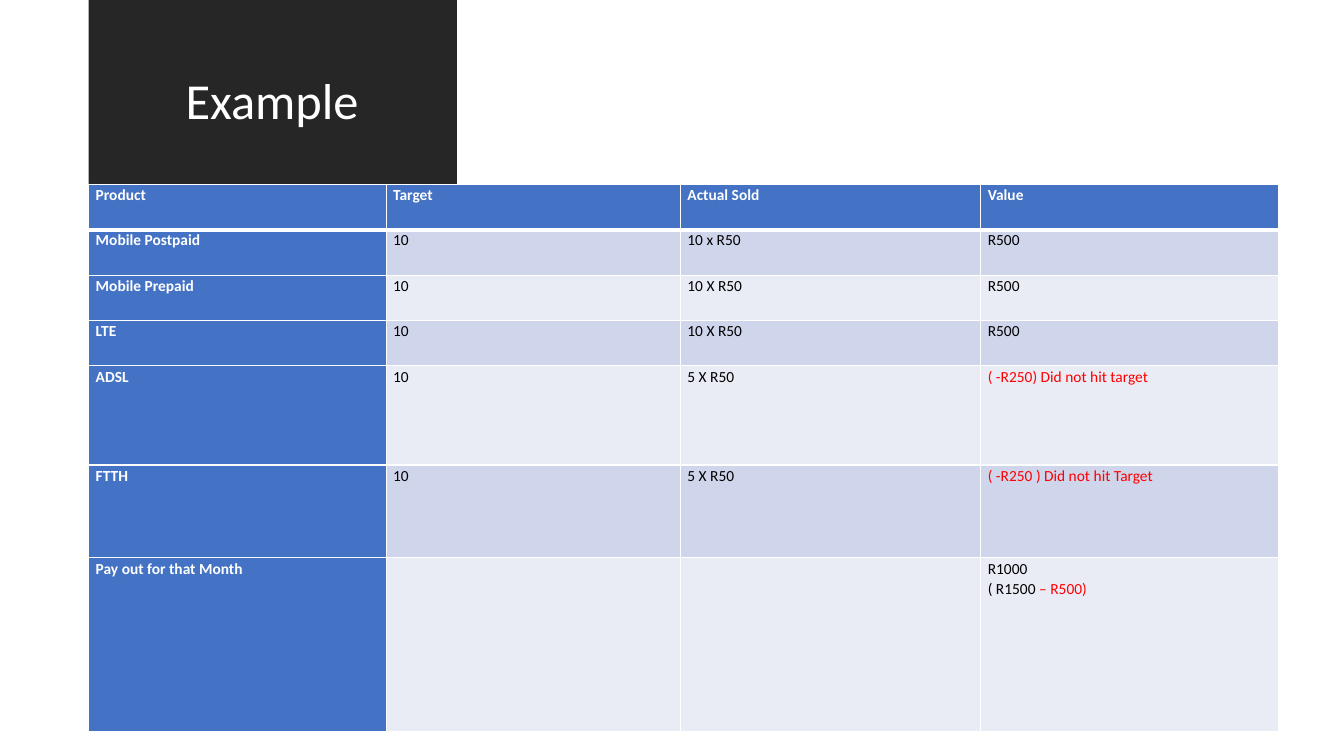
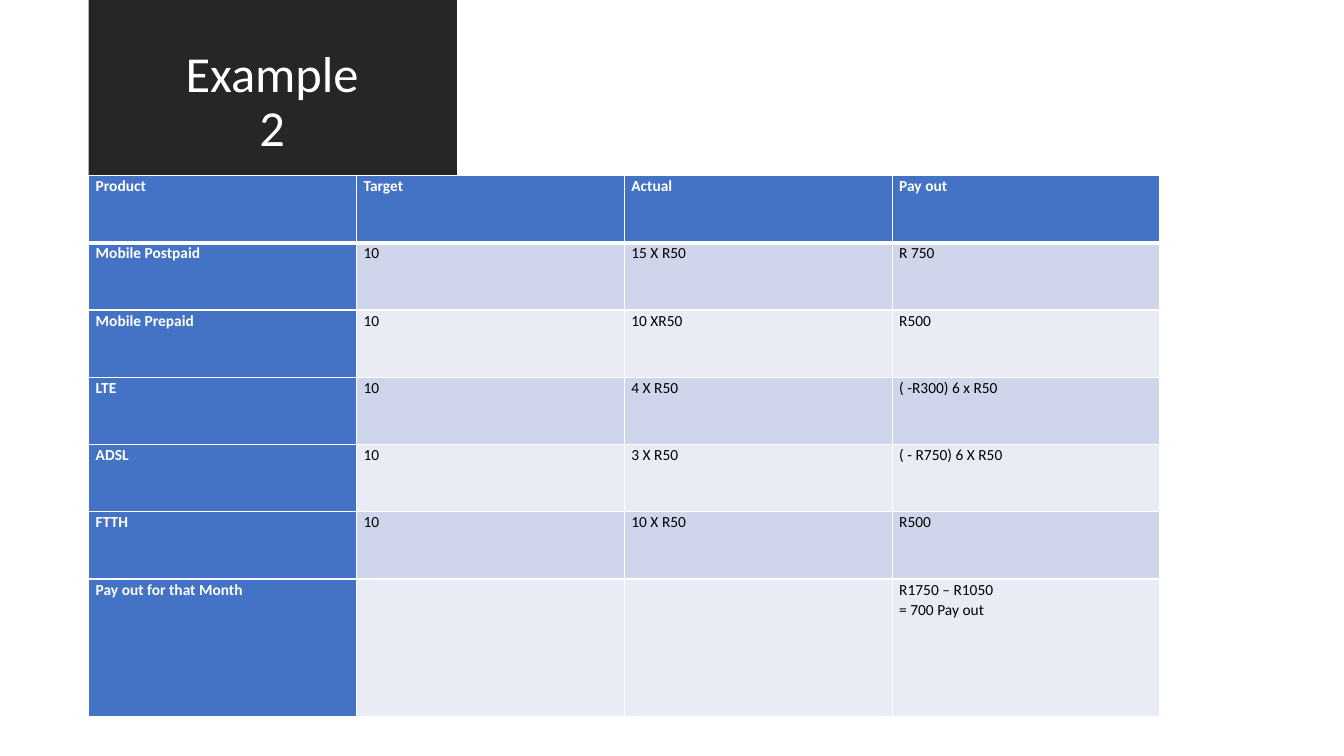
from lxml import etree
from pptx import Presentation
from pptx.dml.color import RGBColor
from pptx.enum.shapes import MSO_SHAPE
from pptx.enum.text import MSO_ANCHOR, MSO_AUTO_SIZE, PP_ALIGN
from pptx.oxml.ns import qn
from pptx.util import Inches, Pt

DOWN_ARROW = MSO_SHAPE.DOWN_ARROW
MIDDLE = MSO_ANCHOR.MIDDLE
NO_AUTOFIT = MSO_AUTO_SIZE.NONE
CENTER = PP_ALIGN.CENTER

WIDTH, HEIGHT = Inches(13.33), Inches(7.5)
COLUMN, ROW = WIDTH / 100, HEIGHT / 100
LEFT = int(6.6 * COLUMN)
FONT = "Calibri"
COLORS = {
    "arrow": "262626",
    "header": "4472C4",
    "dark band": "CFD5EA",
    "light band": "E9EBF5",
    "white": "FFFFFF",
    "black": "000000",
    "red": "FF0000",
}
RED_MARK = "|"

EXAMPLES = [
    {
        "title": "Example",
        "top": 24.4,
        "columns": [22.13, 21.9, 22.35, 22.13],
        "rows": [6] * 4 + [13.1, 12.3, 23],
        "cells": [
            ["Product", "Target", "Actual Sold", "Value"],
            ["Mobile Postpaid", "10", "10 x R50", "R500"],
            ["Mobile Prepaid", "10", "10 X R50", "R500"],
            ["LTE", "10", "10 X R50", "R500"],
            ["ADSL", "10", "5 X R50", "|( -R250) Did not hit target"],
            ["FTTH", "10", "5 X R50", "|( -R250 ) Did not hit Target"],
            ["Pay out for that Month", "", "", "R1000\n( R1500 |– R500)"],
        ],
    },
    {
        "title": "Example\v2",
        "top": 23.2,
        "columns": [19.93] * 4,
        "rows": [8.9] * 6 + [18.2],
        "cells": [
            ["Product", "Target", "Actual", "Pay out"],
            ["Mobile Postpaid", "10", "15 X R50", "R 750"],
            ["Mobile Prepaid", "10", "10 XR50", "R500"],
            ["LTE", "10", "4 X R50", "( -R300) 6 x R50"],
            ["ADSL", "10", "3 X R50", "( - R750) 6 X R50"],
            ["FTTH", "10", "10 X R50", "R500"],
            ["Pay out for that Month", "", "", "R1750 – R1050\n= 700 Pay out"],
        ],
    },
]


def color(name):
    return RGBColor.from_string(COLORS[name])


def set_borders(cell, widths):
    properties = cell._tc.get_or_add_tcPr()
    for position, (side, width) in enumerate(widths.items()):
        line = etree.Element(qn(f"a:ln{side}"), w=str(Pt(width)))
        fill = etree.SubElement(line, qn("a:solidFill"))
        etree.SubElement(fill, qn("a:srgbClr"), val=COLORS["white"])
        properties.insert(position, line)


presentation = Presentation()
presentation.slide_width, presentation.slide_height = WIDTH, HEIGHT
title_only = presentation.slide_layouts[5]

for example in EXAMPLES:
    slide = presentation.slides.add_slide(title_only)
    title = slide.shapes.title

    side = int(27.4 * COLUMN)
    arrow = slide.shapes.add_shape(DOWN_ARROW, LEFT, int(-0.1 * ROW), side, side)
    arrow.adjustments[0], arrow.adjustments[1] = 1, 0.27
    arrow.shadow.inherit = False
    arrow.fill.solid()
    arrow.fill.fore_color.rgb = color("arrow")
    arrow.line.fill.background()
    title._element.addprevious(arrow._element)

    title.left, title.top = int(8.4 * COLUMN), int(-11.7 * ROW)
    title.width, title.height = int(23.7 * COLUMN), int(50.7 * ROW)
    title.text_frame.text = example["title"]
    title.text_frame.auto_size = NO_AUTOFIT
    title.text_frame.vertical_anchor = MIDDLE
    paragraph = title.text_frame.paragraphs[0]
    paragraph.alignment = CENTER
    paragraph.line_spacing = 0.9
    paragraph.font.name, paragraph.font.size = FONT, Pt(36)
    paragraph.font.color.rgb = color("white")

    columns, rows, cells = example["columns"], example["rows"], example["cells"]
    table = slide.shapes.add_table(
        len(rows), len(columns), LEFT, int(example["top"] * ROW),
        int(sum(columns) * COLUMN), int(sum(rows) * ROW),
    ).table
    table.first_row = table.horz_banding = False
    for column, share in zip(table.columns, columns):
        column.width = int(share * COLUMN)
    for row, share in zip(table.rows, rows):
        row.height = int(share * ROW)

    for row_index, texts in enumerate(cells):
        band = "dark band" if row_index % 2 else "light band"
        for column_index, text in enumerate(texts):
            is_header = row_index == 0 or column_index == 0
            cell = table.cell(row_index, column_index)
            cell.margin_left = cell.margin_right = Inches(0.07)
            cell.margin_top = cell.margin_bottom = 0
            cell.fill.solid()
            cell.fill.fore_color.rgb = color("header" if is_header else band)
            set_borders(cell, {
                "L": 1,
                "R": 1,
                "T": 3 if row_index == 1 else 1,
                "B": 3 if row_index == 0 else 1,
            })
            cell.text = text.replace(RED_MARK, "")
            for paragraph, line in zip(cell.text_frame.paragraphs, text.split("\n")):
                paragraph.clear()
                paragraph.line_spacing = 1.07
                paragraph.font.name, paragraph.font.size = FONT, Pt(11)
                paragraph.font.bold = is_header
                plain, _, red = line.partition(RED_MARK)
                for part, name in ((plain, "white" if is_header else "black"), (red, "red")):
                    if part:
                        run = paragraph.add_run()
                        run.text = part
                        run.font.color.rgb = color(name)

presentation.save("out.pptx")
